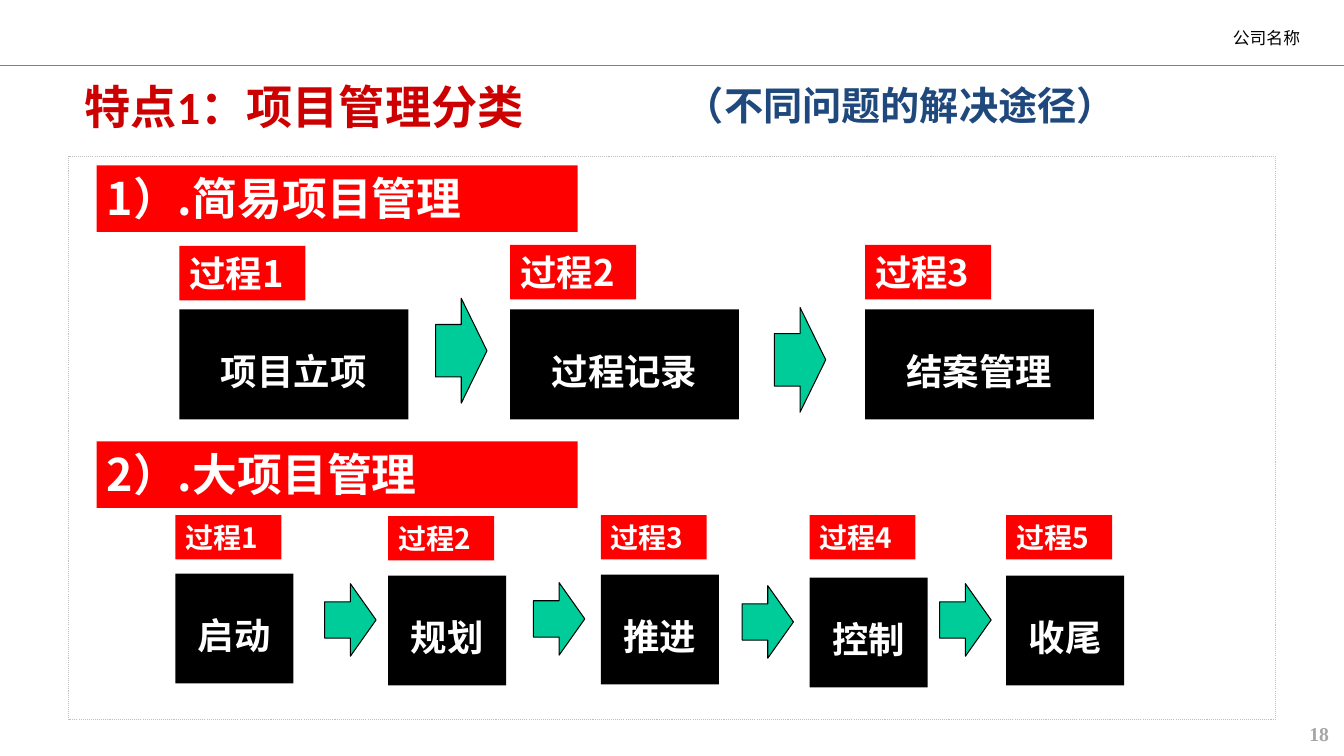
"""Build the slide that compares simple and large project management."""
from typing import NamedTuple

from lxml import etree
from pptx import Presentation
from pptx import util as u
from pptx.dml.color import RGBColor
from pptx.enum import dml, lang, shapes, text
from pptx.oxml import ns

COLORS = {
    "red": "FF0000", "black": "000000", "white": "FFFFFF", "arrow": "00CC99",
    "title": "CC0000", "subtitle": "1F497D", "rule": "808080",
    "frame": "BFBFBF", "number": "A6A6A6",
}
CJK = "Noto Sans CJK SC"
LEFT, CENTER = text.PP_ALIGN.LEFT, text.PP_ALIGN.CENTER
RIGHT, JUSTIFY = text.PP_ALIGN.RIGHT, text.PP_ALIGN.JUSTIFY
TOP, MIDDLE = text.MSO_ANCHOR.TOP, text.MSO_ANCHOR.MIDDLE


class Box(NamedTuple):
    left: float
    top: float
    width: float
    height: float


class Style(NamedTuple):
    size: float
    font: str
    color: str
    bold: bool = True
    align: text.PP_ALIGN = LEFT
    anchor: text.MSO_ANCHOR = TOP
    insets: tuple[float, float, float, float] = (0.1, 0.05, 0.1, 0.05)


class Step(NamedTuple):
    name: str
    left: float
    label_top: float
    top: float


class Arrow(NamedTuple):
    left: float
    top: float


class Process(NamedTuple):
    heading: str
    heading_top: float
    label_size: tuple[float, float]
    label_points: float
    step_width: float
    arrow_height: float
    steps: list[Step]
    arrows: list[Arrow]


HEADING = Style(32, CJK, "white")
STEP = Style(26, "Times New Roman", "white", align=CENTER, anchor=MIDDLE,
             insets=(0.1, 0.17, 0.1, 0.05))
STEP_HEIGHT = 1.09
ARROW_WIDTH = 0.51

PROCESSES = [
    Process("1）.简易项目管理", 1.64, (1.25, 0.54), 26, 2.27, 1.04,
            [Step("项目立项", 1.78, 2.44, 3.07),
             Step("过程记录", 5.06, 2.43, 3.07),
             Step("结案管理", 8.58, 2.43, 3.07)],
            [Arrow(4.32, 2.96), Arrow(7.68, 3.05)]),
    Process("2）.大项目管理", 4.38, (1.05, 0.44), 20, 1.17, 0.72,
            [Step("启动", 1.74, 5.11, 5.69),
             Step("规划", 3.85, 5.12, 5.71),
             Step("推进", 5.96, 5.11, 5.7),
             Step("控制", 8.03, 5.11, 5.73),
             Step("收尾", 9.98, 5.11, 5.71)],
            [Arrow(3.22, 5.79), Arrow(5.29, 5.78),
             Arrow(7.36, 5.81), Arrow(9.32, 5.79)]),
]

CAPTIONS = [
    ("18", Box(12.13, 7.11, 1.15, 0.34),
     Style(14, "Times New Roman", "number", align=RIGHT)),
    ("公司名称", Box(12.13, 0.26, 0.84, 0.23),
     Style(12, "Arial", "black", False, JUSTIFY, MIDDLE,
           (0.1, 0.01, 0.02, 0.01))),
    ("特点1：项目管理分类", Box(0.74, 0.7, 5.58, 0.71),
     Style(33, "Calibri", "title", anchor=MIDDLE)),
    ("（不同问题的解决途径）", Box(6.51, 0.76, 4.84, 0.68),
     Style(28, "Calibri", "subtitle", align=CENTER)),
]


def rgb(name: str) -> RGBColor:
    return RGBColor.from_string(COLORS[name])


def inches(box: Box) -> list[u.Length]:
    return [u.Inches(length) for length in box]


def write(shape, words: str, style: Style) -> None:
    frame = shape.text_frame
    frame.word_wrap = True
    frame.vertical_anchor = style.anchor
    (frame.margin_left, frame.margin_top,
     frame.margin_right, frame.margin_bottom) = map(u.Inches, style.insets)
    paragraph = frame.paragraphs[0]
    paragraph.alignment = style.align
    run = paragraph.add_run()
    run.text = words
    run.font.size = u.Pt(style.size)
    run.font.bold = style.bold
    run.font.color.rgb = rgb(style.color)
    run.font.name = style.font
    run.font.language_id = lang.MSO_LANGUAGE_ID.SIMPLIFIED_CHINESE
    east_asian = etree.Element(ns.qn("a:ea"), typeface=CJK)
    run._r.rPr.find(ns.qn("a:latin")).addnext(east_asian)


def draw_shape(slide, kind: shapes.MSO_SHAPE, box: Box,
               fill: str | None = None, line: str | None = None):
    shape = slide.shapes.add_shape(kind, *inches(box))
    shape.shadow.inherit = False
    if fill:
        shape.fill.solid()
        shape.fill.fore_color.rgb = rgb(fill)
    else:
        shape.fill.background()
    if line:
        shape.line.color.rgb = rgb(line)
        shape.line.width = u.Pt(0.75)
    else:
        shape.line.fill.background()
    return shape


def draw_block(slide, words: str, box: Box, fill: str, style: Style) -> None:
    write(draw_shape(slide, shapes.MSO_SHAPE.RECTANGLE, box, fill), words, style)


def draw_process(slide, process: Process) -> None:
    draw_block(slide, process.heading,
               Box(0.96, process.heading_top, 4.77, 0.66), "red", HEADING)
    label_style = Style(process.label_points, CJK, "white")
    for number, step in enumerate(process.steps, start=1):
        draw_block(slide, f"过程{number}",
                   Box(step.left, step.label_top, *process.label_size),
                   "red", label_style)
        draw_block(slide, step.name,
                   Box(step.left, step.top, process.step_width, STEP_HEIGHT),
                   "black", STEP)
    for arrow in process.arrows:
        draw_shape(slide, shapes.MSO_SHAPE.RIGHT_ARROW,
                   Box(*arrow, ARROW_WIDTH, process.arrow_height),
                   "arrow", "black")


def draw_header_rule(slide) -> None:
    rule = slide.shapes.add_connector(
        shapes.MSO_CONNECTOR.STRAIGHT, *inches(Box(0, 0.65, 13.33, 0.65)))
    rule.line.color.rgb = rgb("rule")
    rule.line.width = u.Pt(1.25)
    etree.SubElement(rule._element.spPr, ns.qn("a:effectLst"))


def main() -> None:
    deck = Presentation()
    deck.slide_width, deck.slide_height = u.Inches(13.33), u.Inches(7.5)
    slide = deck.slides.add_slide(deck.slide_layouts[6])
    content_frame = draw_shape(slide, shapes.MSO_SHAPE.RECTANGLE,
                               Box(0.68, 1.55, 11.97, 5.59), line="frame")
    content_frame.line.dash_style = dml.MSO_LINE.ROUND_DOT
    draw_header_rule(slide)
    for words, box, style in CAPTIONS:
        write(slide.shapes.add_textbox(*inches(box)), words, style)
    for process in PROCESSES:
        draw_process(slide, process)
    deck.save("out.pptx")


if __name__ == "__main__":
    main()
